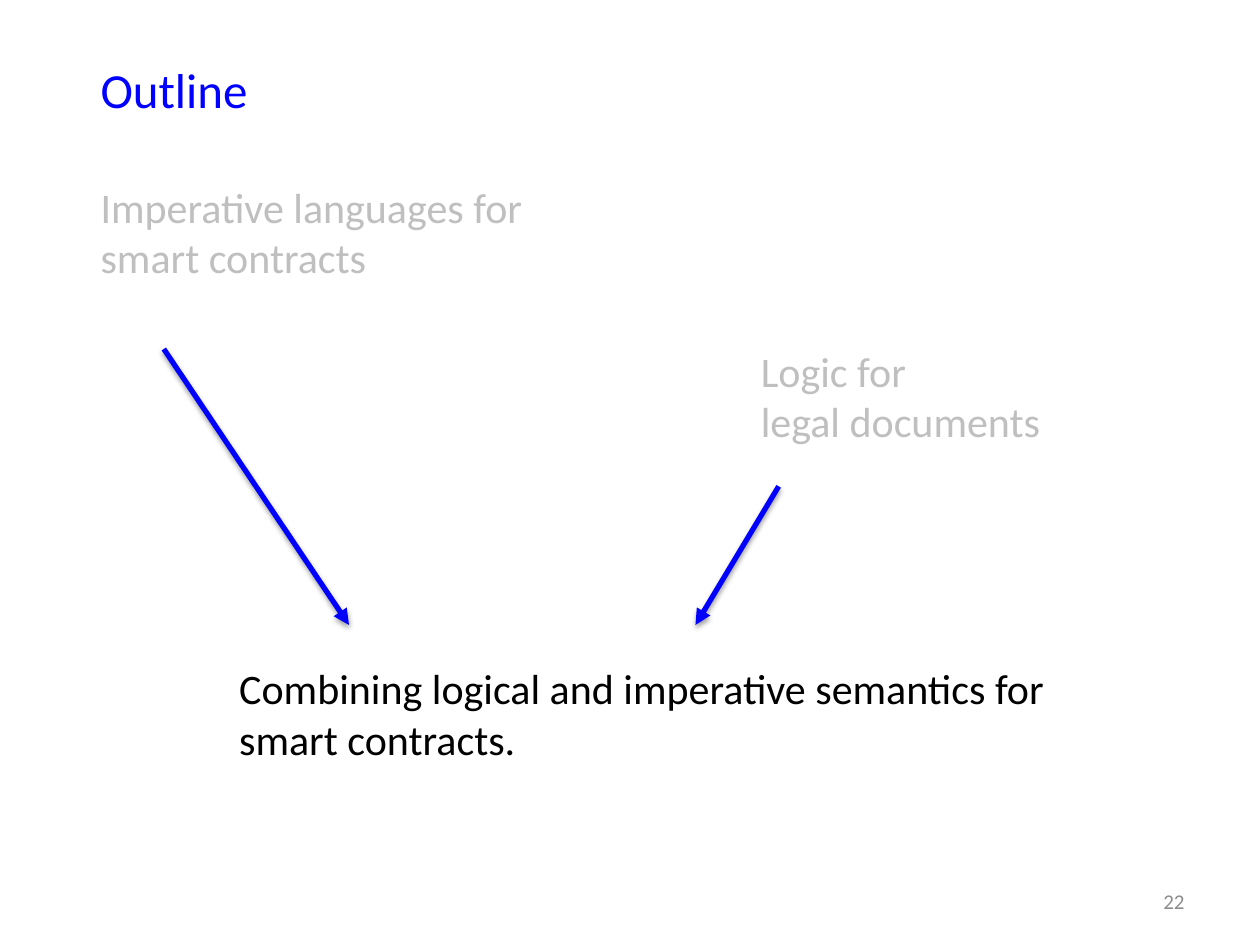
from lxml import etree
from pptx import Presentation
from pptx.dml.color import RGBColor
from pptx.enum.shapes import MSO_CONNECTOR
from pptx.enum.text import MSO_ANCHOR, PP_ALIGN
from pptx.oxml import parse_xml
from pptx.oxml.ns import nsdecls, qn
from pptx.util import Inches, Pt

COLORS = {"blue": "0000FF", "faded": "BFBFBF", "black": "000000", "number": "8C8C8C"}
FONT = "Calibri"

# lines, (left, top, width, height), size, color, indent
TEXTS = [
    (["Outline"], (0.7, 0.42, 8.9, 0.57), 28, "blue", 0),
    (["Imperative languages for", "smart contracts"],
     (0.7, 1.39, 3.66, 0.91), 24, "faded", 0),
    (["Logic for", "legal documents"], (5.94, 2.69, 2.45, 0.91), 24, "faded", 0),
    (["Combining logical and imperative semantics for", "smart contracts."],
     (1.3, 5.21, 7.16, 1.21), 24, "black", 0.5),
]
PAGE_NUMBER = (["22"], (7.17, 6.95, 2.33, 0.4), 12, "number", 0)

# start, end
ARROWS = [((1.3, 2.77), (2.77, 4.96)), ((6.18, 3.86), (5.52, 4.96))]

SHADOW = (
    f'<a:effectLst {nsdecls("a")}>'
    f'<a:outerShdw blurRad="{Pt(3.1)}" dist="{Pt(1.6)}" dir="5400000" rotWithShape="0">'
    f'<a:srgbClr val="{COLORS["black"]}"><a:alpha val="38000"/></a:srgbClr>'
    '</a:outerShdw></a:effectLst>'
)


def add_text(slide, lines, box, size, color, indent,
             align=PP_ALIGN.LEFT, anchor=MSO_ANCHOR.TOP):
    frame = slide.shapes.add_textbox(*map(Inches, box)).text_frame
    frame.word_wrap = True
    frame.vertical_anchor = anchor
    frame.text = "\n".join(lines)
    for paragraph in frame.paragraphs:
        paragraph.alignment = align
        if indent:
            paragraph.level = 1
            properties = paragraph._p.get_or_add_pPr()
            properties.set("marL", str(Inches(indent)))
            properties.set("indent", "0")
        font = paragraph.runs[0].font
        for name, value in {"name": FONT, "size": Pt(size)}.items():
            setattr(font, name, value)
        font.color.rgb = RGBColor.from_string(COLORS[color])


def add_arrow(slide, start, end):
    arrow = slide.shapes.add_connector(
        MSO_CONNECTOR.STRAIGHT, *map(Inches, start + end))
    arrow.line.color.rgb = RGBColor.from_string(COLORS["blue"])
    arrow.line.width = Pt(3)
    etree.SubElement(arrow.line._get_or_add_ln(), qn("a:tailEnd"), type="triangle")
    arrow._element.spPr.append(parse_xml(SHADOW))


def main():
    presentation = Presentation()
    presentation.slide_width, presentation.slide_height = Inches(10), Inches(7.5)
    slide = presentation.slides.add_slide(presentation.slide_layouts[6])
    for text in TEXTS:
        add_text(slide, *text)
    add_text(slide, *PAGE_NUMBER, align=PP_ALIGN.RIGHT, anchor=MSO_ANCHOR.MIDDLE)
    for start, end in ARROWS:
        add_arrow(slide, start, end)
    presentation.save("out.pptx")


if __name__ == "__main__":
    main()
